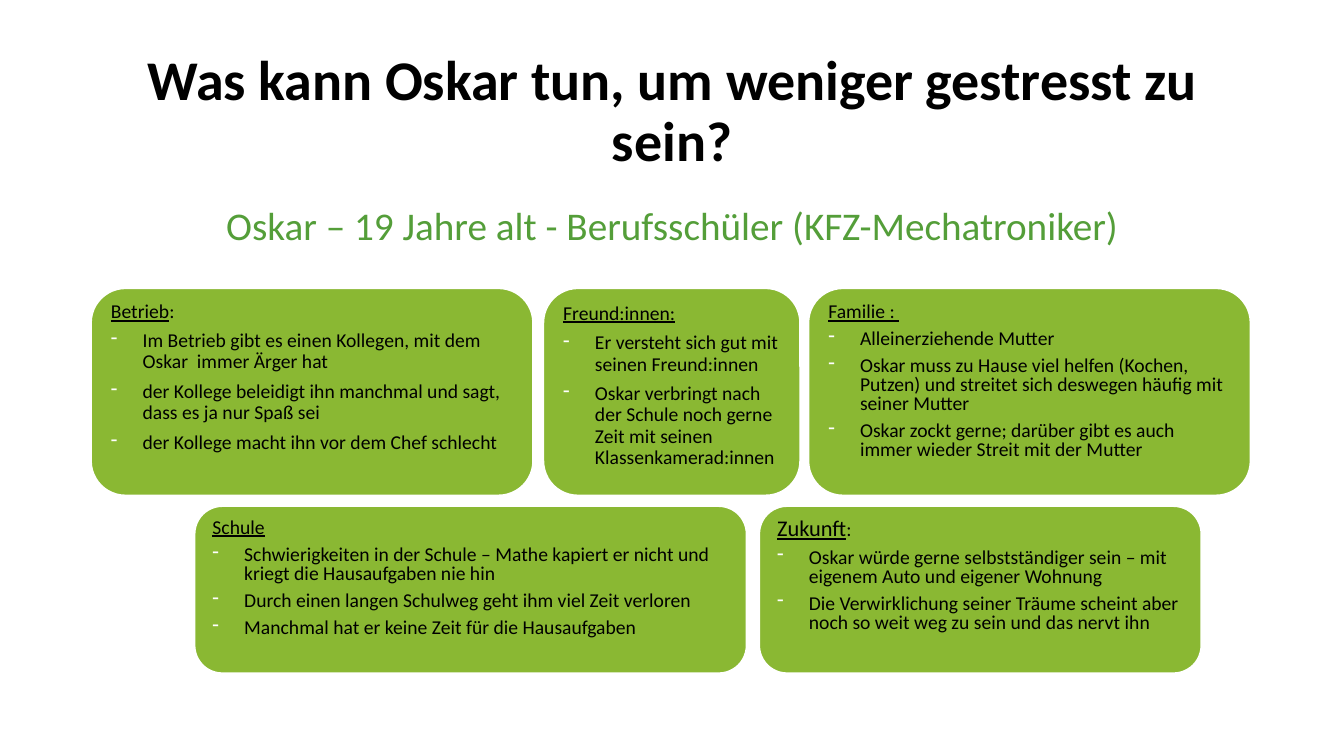
import pptx
import pptx.util
import pptx.dml.color
import pptx.enum.shapes
import pptx.enum.text
import pptx.oxml.ns
import lxml.etree

Cm = pptx.util.Cm
Pt = pptx.util.Pt
ALIGN = pptx.enum.text.PP_ALIGN
ANCHOR = pptx.enum.text.MSO_ANCHOR

HUES = {"text": "000000", "lead": "549E39", "card": "8AB833", "edge": "FFFFFF"}

TITLE = "Was kann Oskar tun, um weniger gestresst zu sein?"
LEAD = "Oskar – 19 Jahre alt - Berufsschüler (KFZ-Mechatroniker)"

ROWS = [
    {"top": 7.26, "high": 5.23, "cards": [
        {"left": 2.29, "wide": 11.15, "head": "Betrieb", "tail": ":", "size": 14,
         "gaps": (0.8, 0.9), "list": [
             "Im Betrieb gibt es einen Kollegen, mit dem Oskar  immer Ärger hat",
             "der Kollege beleidigt ihn manchmal und sagt, dass es ja nur Spaß sei",
             "der Kollege macht ihn vor dem Chef schlecht"]},
        {"left": 13.69, "wide": 6.48, "head": "Freund:innen:", "tail": "", "size": 14,
         "gaps": (0.9, 0.9), "list": [
             "Er versteht sich gut mit seinen Freund:innen",
             "Oskar verbringt nach der Schule noch gerne Zeit mit seinen "
             "Klassenkamerad:innen"]},
        {"left": 20.37, "wide": 11.15, "head": "Familie : ", "tail": "", "size": 14,
         "gaps": (0.8, 0.8), "list": [
             "Alleinerziehende Mutter",
             "Oskar muss zu Hause viel helfen (Kochen, Putzen) und streitet sich "
             "deswegen häufig mit seiner Mutter",
             "Oskar zockt gerne; darüber gibt es auch immer wieder Streit mit der Mutter"]},
    ]},
    {"top": 12.75, "high": 4.22, "cards": [
        {"left": 4.9, "wide": 13.92, "head": "Schule", "tail": "", "size": 14,
         "gaps": (0.8, 0.8), "list": [
             "Schwierigkeiten in der Schule – Mathe kapiert er nicht und kriegt die "
             "Hausaufgaben nie hin",
             "Durch einen langen Schulweg geht ihm viel Zeit verloren",
             "Manchmal hat er keine Zeit für die Hausaufgaben"]},
        {"left": 19.13, "wide": 11.15, "head": "Zukunft", "tail": ":", "size": 16,
         "gaps": (0.8, 0.8), "list": [
             "Oskar würde gerne selbstständiger sein – mit eigenem Auto und eigener Wohnung",
             "Die Verwirklichung seiner Träume scheint aber noch so weit weg zu sein "
             "und das nervt ihn"]},
    ]},
]

FRAME = {"word_wrap": True, "auto_size": pptx.enum.text.MSO_AUTO_SIZE.NONE,
         "margin_left": Cm(0.25), "margin_right": Cm(0.25),
         "margin_top": Cm(0.13), "margin_bottom": Cm(0.13)}


def apply(item, **vals):
    for key, val in vals.items():
        setattr(item, key, val)


def paint(hue):
    return pptx.dml.color.RGBColor.from_string(HUES[hue])


def write(para, text, size, hue="text", **vals):
    run = para.add_run()
    run.text = text
    apply(run.font, name="Calibri", size=Pt(size), **vals)
    run.font.color.rgb = paint(hue)


def add_node(root, tag, **vals):
    return lxml.etree.SubElement(root, pptx.oxml.ns.qn(tag), **vals)


def dash(para):
    props = para._p.get_or_add_pPr()
    props.set("marL", str(Cm(0.8)))
    props.set("indent", str(-Cm(0.8)))
    tint = add_node(props, "a:buClr")
    add_node(tint, "a:srgbClr", val=HUES["edge"])
    add_node(props, "a:buFontTx")
    add_node(props, "a:buChar", char="-")


def fill_holder(shape, box, text, size, hue, anchor, before, bold):
    apply(shape, **dict(zip(("left", "top", "width", "height"), map(Cm, box))))
    frame = shape.text_frame
    apply(frame, vertical_anchor=anchor, **FRAME)
    para = frame.paragraphs[0]
    apply(para, alignment=ALIGN.CENTER, line_spacing=0.9, space_before=Pt(before))
    props = para._p.get_or_add_pPr()
    props.set("marL", "0")
    props.set("indent", "0")
    add_node(props, "a:buNone")
    write(para, text, size, hue, bold=bold)


def add_card(slide, row, card):
    box = map(Cm, (card["left"], row["top"], card["wide"], row["high"]))
    shape = slide.shapes.add_shape(
        pptx.enum.shapes.MSO_SHAPE.ROUNDED_RECTANGLE, *box)
    shape.shadow.inherit = False
    shape.adjustments[0] = 0.167
    shape.fill.solid()
    shape.fill.fore_color.rgb = paint("card")
    shape.line.color.rgb = paint("edge")
    shape.line.width = Pt(1.5)
    frame = shape.text_frame
    apply(frame, vertical_anchor=ANCHOR.TOP, **FRAME)
    first, rest = card["gaps"]
    para = frame.paragraphs[0]
    apply(para, alignment=ALIGN.LEFT, line_spacing=first)
    write(para, card["head"], card["size"], underline=True)
    if card["tail"]:
        write(para, card["tail"], 14)
    for text in card["list"]:
        para = frame.add_paragraph()
        apply(para, alignment=ALIGN.LEFT, line_spacing=rest, space_before=Pt(6))
        dash(para)
        write(para, text, 14)


def main():
    deck = pptx.Presentation()
    apply(deck, slide_width=Cm(33.87), slide_height=Cm(19.05))
    slide = deck.slides.add_slide(deck.slide_layouts[1])
    fill_holder(slide.shapes.title, (2.33, 1.01, 29.21, 3.68), TITLE, 40, "text",
                ANCHOR.MIDDLE, 0, True)
    fill_holder(slide.placeholders[1], (2.33, 5.07, 29.21, 12.09), LEAD, 28, "lead",
                ANCHOR.TOP, 10, False)
    for row in ROWS:
        for card in row["cards"]:
            add_card(slide, row, card)
    deck.save("out.pptx")


if __name__ == "__main__":
    main()
